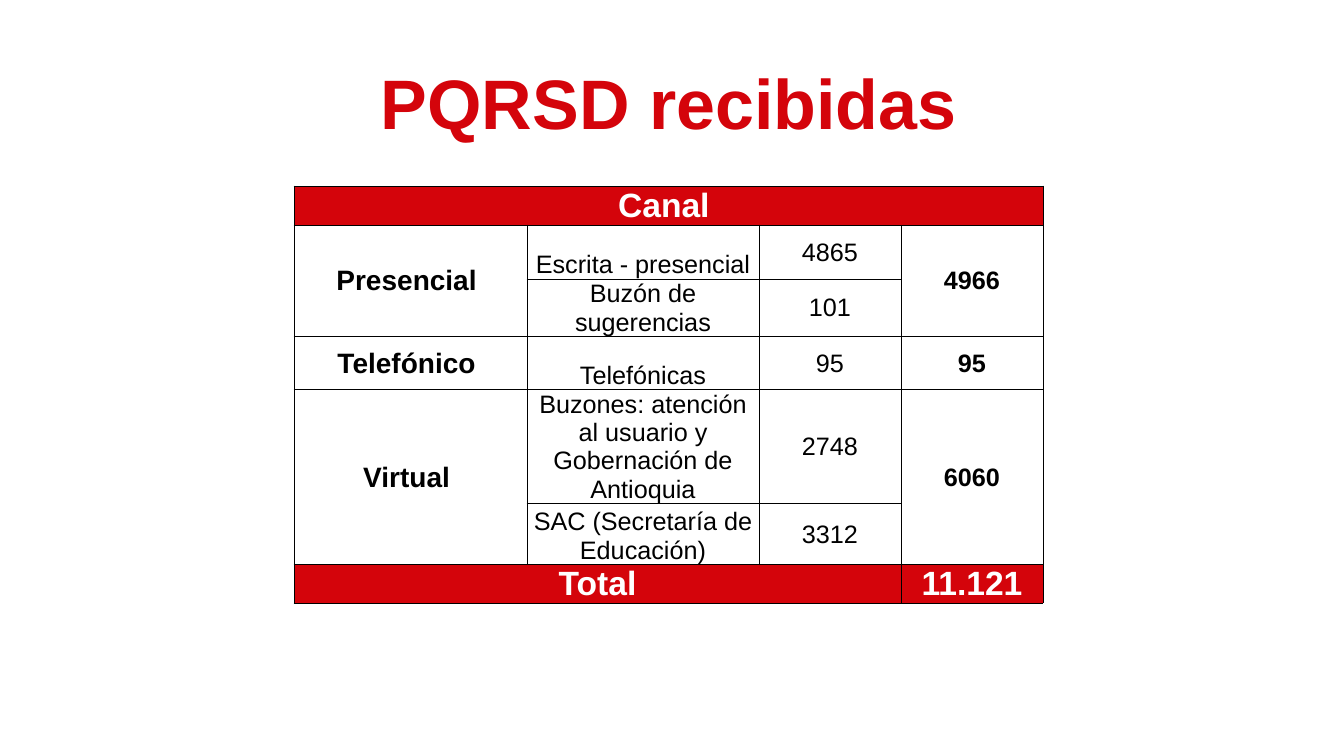
from dataclasses import dataclass

from lxml.etree import SubElement
from pptx import Presentation
from pptx.dml.color import RGBColor
from pptx.enum.text import MSO_ANCHOR as Anchor, PP_ALIGN as Align
from pptx.oxml.ns import qn
from pptx.slide import Slide
from pptx.table import Table, _Cell as Cell
from pptx.text.text import TextFrame
from pptx.util import Emu, Pt


@dataclass(frozen=True)
class Theme:
    font: str = "Arial"
    red: RGBColor = RGBColor(0xD4, 0x04, 0x0B)
    white: RGBColor = RGBColor(0xFF, 0xFF, 0xFF)
    black: RGBColor = RGBColor(0, 0, 0)
    title_size: int = 50
    band_size: int = 24
    channel_size: int = 20
    body_size: int = 18
    border: float = 0.5


@dataclass(frozen=True)
class Style:
    size: int
    color: RGBColor
    bold: bool = False
    anchor: Anchor = Anchor.MIDDLE
    fill: RGBColor | None = None


@dataclass(frozen=True)
class Entry:
    row: int
    col: int
    text: str
    style: Style
    rows: int = 1
    cols: int = 1


@dataclass(frozen=True)
class Channel:
    name: str
    total: str
    sources: tuple[tuple[str, str], ...]


THEME = Theme()
TITLE = Style(THEME.title_size, THEME.red, True, Anchor.BOTTOM)
BAND = Style(THEME.band_size, THEME.white, True, Anchor.BOTTOM, THEME.red)
GRAND_TOTAL = Style(THEME.band_size, THEME.white, True, Anchor.MIDDLE, THEME.red)
CHANNEL = Style(THEME.channel_size, THEME.black, True)
SOURCE = Style(THEME.body_size, THEME.black, anchor=Anchor.BOTTOM)
COUNT = Style(THEME.body_size, THEME.black)
SUBTOTAL = Style(THEME.body_size, THEME.black, True)

COLUMN_WIDTHS = (233, 232, 142, 142)
ROW_HEIGHTS = (39, 54, 57, 53, 114, 61, 38)
CHANNELS = (
    Channel("Presencial ", "4966", (("Escrita - presencial", "4865"), ("Buzón de sugerencias", "101"))),
    Channel("Telefónico ", "95", (("Telefónicas", "95"),)),
    Channel("Virtual ", "6060", (
        ("Buzones: atención al usuario y Gobernación de Antioquia", "2748"),
        ("SAC (Secretaría de Educación)", "3312"),
    )),
)


def px(length: int) -> Emu:
    """Convert px, at 100.8 to the inch, into EMU."""
    return Emu(round(length * 914400 / 100.8))


def write(frame: TextFrame, text: str, style: Style) -> None:
    frame.text = text
    frame.word_wrap = True
    paragraph = frame.paragraphs[0]
    paragraph.alignment = Align.CENTER
    font = paragraph.runs[0].font
    font.name = THEME.font
    font.size = Pt(style.size)
    font.bold = style.bold
    font.color.rgb = style.color


def add_title(slide: Slide, text: str) -> None:
    title = slide.shapes.add_textbox(px(329), px(56), px(680), px(94)).text_frame
    write(title, text, TITLE)
    title.vertical_anchor = TITLE.anchor
    title.paragraphs[0].line_spacing = 0.9


def add_borders(cell: Cell) -> None:
    properties = cell._tc.get_or_add_tcPr()
    for side in ("a:lnL", "a:lnR", "a:lnT", "a:lnB"):
        line = SubElement(properties, qn(side), w=str(Pt(THEME.border)))
        fill = SubElement(line, qn("a:solidFill"))
        SubElement(fill, qn("a:srgbClr"), val=str(THEME.black))


def channel_entries() -> list[Entry]:
    """Lay out the header, each channel with its sources, and the total."""
    entries = [Entry(0, 0, "Canal ", BAND, cols=4)]
    row = 1
    for channel in CHANNELS:
        height = len(channel.sources)
        entries.append(Entry(row, 0, channel.name, CHANNEL, rows=height))
        entries.append(Entry(row, 3, channel.total, SUBTOTAL, rows=height))
        for source, count in channel.sources:
            entries += [Entry(row, 1, source, SOURCE), Entry(row, 2, count, COUNT)]
            row += 1
    return entries + [Entry(row, 0, "Total", BAND, cols=3), Entry(row, 3, "11.121", GRAND_TOTAL)]


def fill_entry(table: Table, entry: Entry) -> None:
    cell = table.cell(entry.row, entry.col)
    if entry.rows * entry.cols > 1:
        cell.merge(table.cell(entry.row + entry.rows - 1, entry.col + entry.cols - 1))
    write(cell.text_frame, entry.text, entry.style)
    cell.vertical_anchor = entry.style.anchor
    if entry.style.fill is not None:
        cell.fill.solid()
        cell.fill.fore_color.rgb = entry.style.fill


def add_channel_table(slide: Slide) -> None:
    table = slide.shapes.add_table(
        len(ROW_HEIGHTS), len(COLUMN_WIDTHS), px(294), px(186), px(sum(COLUMN_WIDTHS)), px(sum(ROW_HEIGHTS))
    ).table
    table.first_row = table.horz_banding = False
    for column, width in zip(table.columns, COLUMN_WIDTHS):
        column.width = px(width)
    for row, height in zip(table.rows, ROW_HEIGHTS):
        row.height = px(height)
    for cell in table.iter_cells():
        cell.margin_left = cell.margin_right = cell.margin_top = px(1)
        cell.margin_bottom = 0
        add_borders(cell)
        cell.fill.background()
    for entry in channel_entries():
        fill_entry(table, entry)


def main() -> None:
    deck = Presentation()
    deck.slide_width, deck.slide_height = px(1344), px(756)
    slide = deck.slides.add_slide(deck.slide_layouts[6])
    add_channel_table(slide)
    add_title(slide, "PQRSD recibidas")
    deck.save("out.pptx")


if __name__ == "__main__":
    main()
